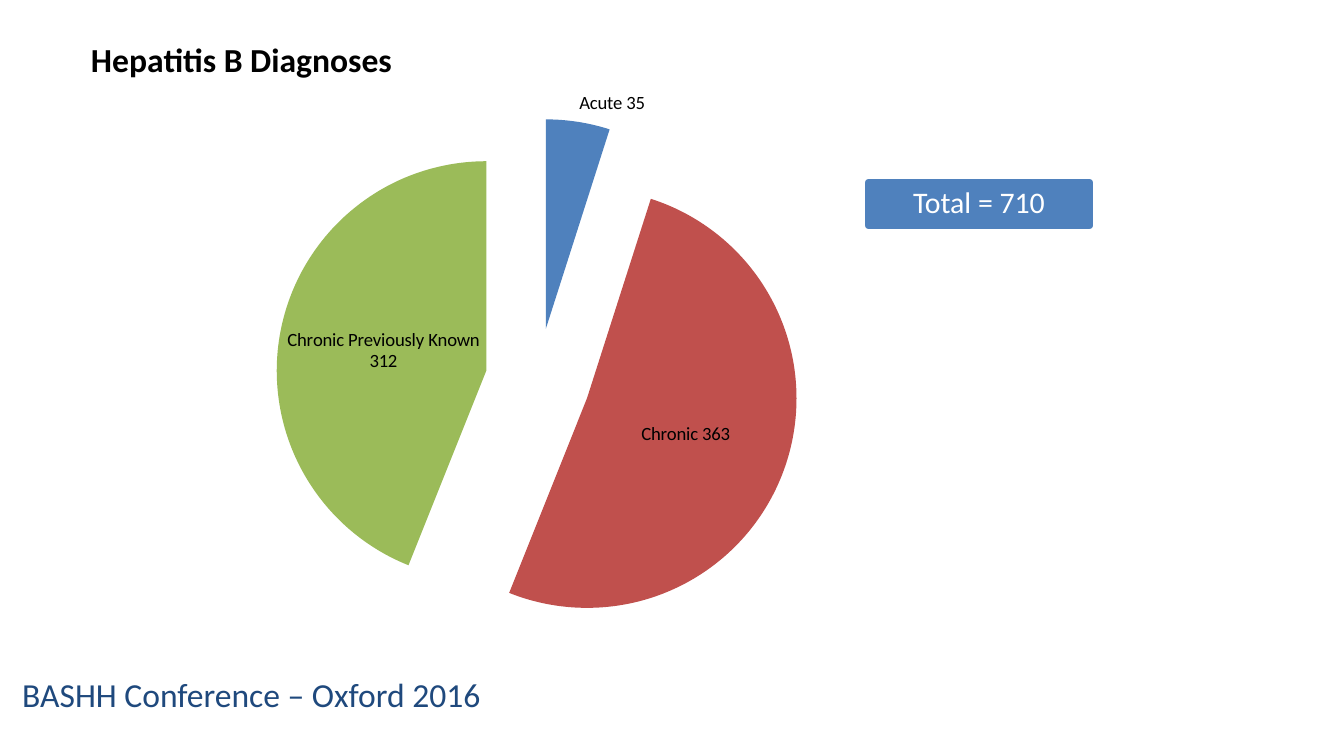
from dataclasses import dataclass
from lxml import etree
from pptx import Presentation, util as u
from pptx.chart.data import CategoryChartData
from pptx.dml.color import RGBColor
from pptx.enum import chart as ch, shapes as sh, text as tx
from pptx.oxml.ns import qn

TITLE = "Hepatitis B Diagnoses"
TOTAL = "Total = 710"
FOOT = "BASHH Conference – Oxford 2016"
CASES = [("Acute", 35), ("Chronic", 363), ("Chronic Previously Known", 312)]

SIZE = (1344, 756)
BOX = {"foot": (9, 667, 642, 92), "total": (863, 177, 232, 54), "chart": (38, 0, 1090, 664)}
PLOT = (276, 119, 524, 524)
HEAD = (85, 30)
BURST = 25


@dataclass(frozen=True)
class Theme:
    font: str = "Calibri"
    ink: str = "000000"
    navy: str = "1F497D"
    white: str = "FFFFFF"
    slices: tuple = ("4F81BD", "C0504D", "9BBB59")
    label: int = 10
    total: int = 16
    head: int = 18


T = Theme()


def px(n):
    return u.Emu(round(n * 914400 / 134.4))


def place(name):
    return [px(n) for n in BOX[name]]


def style(font, size, color, bold=False):
    for key, val in {"name": T.font, "size": u.Pt(size), "bold": bold}.items():
        setattr(font, key, val)
    font.color.rgb = RGBColor.from_string(color)


def paint(fill, color):
    fill.solid()
    fill.fore_color.rgb = RGBColor.from_string(color)


def write(shape, words, size, color):
    shape.text_frame.word_wrap = True
    par = shape.text_frame.paragraphs[0]
    par.text = words
    style(par.font, size, color)
    return par


def layout(node, spot, inner=False):
    for old in node.findall(qn("c:layout")):
        node.remove(old)
    lay = etree.Element(qn("c:layout"))
    man = etree.SubElement(lay, qn("c:manualLayout"))
    left, top, wide, high = BOX["chart"]
    pairs = [("layoutTarget", "inner")] if inner else []
    pairs += [("xMode", "edge"), ("yMode", "edge")]
    parts = (spot[0] - left) / wide, (spot[1] - top) / high
    parts += tuple(n / d for n, d in zip(spot[2:], (wide, high)))
    pairs += [(k, f"{n:.3f}") for k, n in zip("xywh", parts)]
    for key, val in pairs:
        etree.SubElement(man, qn("c:" + key)).set("val", val)
    if inner:
        node.insert(0, lay)
    else:
        node.find(qn("c:tx")).addnext(lay)


def pie(slide):
    data = CategoryChartData()
    data.categories = [name for name, _ in CASES]
    data.add_series("Series 1", [count for _, count in CASES])
    chart = slide.shapes.add_chart(ch.XL_CHART_TYPE.PIE, *place("chart"), data).chart
    style(chart.font, T.label, T.ink)
    chart.has_legend = False
    chart.has_title = True
    par = chart.chart_title.text_frame.paragraphs[0]
    par.text = TITLE
    style(par.runs[0].font, T.head, T.ink, True)
    layout(chart.chart_title._element, HEAD)
    plot = chart.plots[0]
    plot.vary_by_categories = True
    layout(plot._element.getparent(), PLOT, True)

    ser = plot.series[0]
    for i, color in enumerate(T.slices):
        paint(ser.points[i].format.fill, color)
    burst = etree.Element(qn("c:explosion"))
    burst.set("val", str(BURST))
    ser._element.find(qn("c:dPt")).addprevious(burst)

    tags = ser.data_labels
    form = {"show_value": True, "show_category_name": True,
            "position": ch.XL_LABEL_POSITION.CENTER}
    for key, val in form.items():
        setattr(tags, key, val)
    style(tags.font, T.label, T.ink)
    ser.points[0].data_label.position = ch.XL_LABEL_POSITION.OUTSIDE_END
    for node in ser._element.iter(qn("c:showCatName")):
        node.set("val", "1")
    for node in list(ser._element.iter(qn("c:showBubbleSize"))):
        gap = etree.Element(qn("c:separator"))
        gap.text = " "
        node.addnext(gap)


def badge(slide):
    box = slide.shapes.add_shape(sh.MSO_SHAPE.ROUNDED_RECTANGLE, *place("total"))
    box.shadow.inherit = False
    box.adjustments[0] = 0.1
    paint(box.fill, T.slices[0])
    paint(box.line.fill, T.white)
    box.line.width = u.Pt(2)
    par = write(box, TOTAL, T.total, T.white)
    par.alignment = tx.PP_ALIGN.CENTER
    par.line_spacing = 0.9
    box.text_frame.vertical_anchor = tx.MSO_ANCHOR.MIDDLE


def main():
    deck = Presentation()
    deck.slide_width, deck.slide_height = map(px, SIZE)
    slide = deck.slides.add_slide(deck.slide_layouts[6])
    write(slide.shapes.add_textbox(*place("foot")), FOOT, T.head, T.navy)
    badge(slide)
    pie(slide)
    deck.save("out.pptx")


if __name__ == "__main__":
    main()
